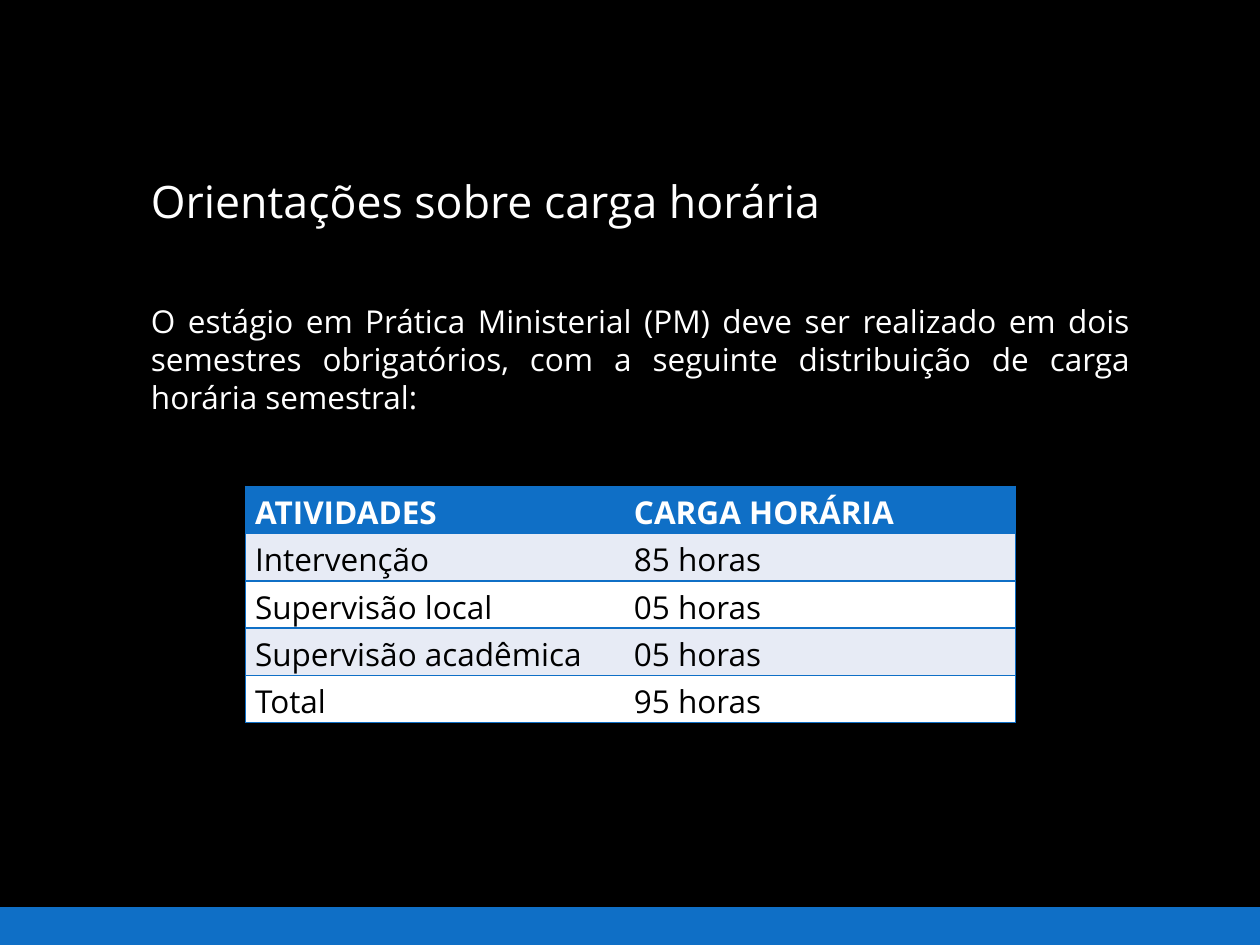
from dataclasses import dataclass

from lxml.etree import SubElement
from pptx import Presentation
from pptx.dml.color import RGBColor
from pptx.enum.shapes import MSO_SHAPE
from pptx.enum.text import MSO_ANCHOR, PP_ALIGN
from pptx.oxml.ns import qn
from pptx.util import Pt

COLORS = {
    "background": "000000",
    "accent": "0F6FC6",
    "light": "FFFFFF",
    "dark": "000000",
    "band": "E7EBF5",
}
FONT = "Open Sans"
COLUMN_WIDTHS = (216.5, 223.5)
ROW_HEIGHT = 27


@dataclass
class Activity:
    name: str
    hours: str


HEADER = Activity("ATIVIDADES", "CARGA HORÁRIA")
ACTIVITIES = [
    Activity("Intervenção", "85 horas"),
    Activity("Supervisão local", "05 horas"),
    Activity("Supervisão acadêmica", "05 horas"),
    Activity("Total", "95 horas"),
]


def rgb(name: str) -> RGBColor:
    return RGBColor.from_string(COLORS[name])


def write(frame, text: str, *, size: float = 18, color: str = "light",
          bold: bool = False, align=PP_ALIGN.LEFT, line_spacing: float = 1.0) -> None:
    paragraph = frame.paragraphs[0]
    paragraph.alignment = align
    paragraph.line_spacing = line_spacing
    run = paragraph.add_run()
    run.text = text
    run.font.name = FONT
    run.font.size = Pt(size)
    run.font.bold = bold
    run.font.color.rgb = rgb(color)


def add_text(slide, left: float, top: float, width: float, height: float,
             text: str, *, anchor=MSO_ANCHOR.TOP, **text_format) -> None:
    frame = slide.shapes.add_textbox(Pt(left), Pt(top), Pt(width), Pt(height)).text_frame
    frame.word_wrap = True
    frame.vertical_anchor = anchor
    write(frame, text, **text_format)


def set_borders(cell, sides: str) -> None:
    """Rule the given sides (letters of LRTB) and clear the others."""
    properties = cell._tc.get_or_add_tcPr()
    for side in "LRTB":
        line = SubElement(properties, qn(f"a:ln{side}"), w=str(Pt(1)))
        if side in sides:
            fill = SubElement(line, qn("a:solidFill"))
            SubElement(fill, qn("a:srgbClr"), val=COLORS["accent"])
        else:
            SubElement(line, qn("a:noFill"))


def fill_cell(cell, text: str, *, sides: str, fill: str, color: str, bold: bool) -> None:
    set_borders(cell, sides)
    cell.fill.solid()
    cell.fill.fore_color.rgb = rgb(fill)
    cell.margin_left = cell.margin_right = Pt(5.4)
    cell.margin_top = cell.margin_bottom = Pt(2.7)
    write(cell.text_frame, text, color=color, bold=bold)


def add_hours_table(slide, left: float, top: float) -> None:
    rows = [HEADER, *ACTIVITIES]
    table = slide.shapes.add_table(
        len(rows), len(COLUMN_WIDTHS), Pt(left), Pt(top),
        Pt(sum(COLUMN_WIDTHS)), Pt(ROW_HEIGHT * len(rows)),
    ).table
    for column, width in zip(table.columns, COLUMN_WIDTHS):
        column.width = Pt(width)
    for index, activity in enumerate(rows):
        is_header = index == 0
        table.rows[index].height = Pt(ROW_HEIGHT)
        row_format = {
            "fill": "accent" if is_header else "band" if index % 2 else "light",
            "color": "light" if is_header else "dark",
            "bold": is_header,
        }
        fill_cell(table.cell(index, 0), activity.name, sides="LTB", **row_format)
        fill_cell(table.cell(index, 1), activity.hours, sides="RTB", **row_format)


def add_footer_bar(slide) -> None:
    bar = slide.shapes.add_shape(MSO_SHAPE.RECTANGLE, Pt(0), Pt(518.4), Pt(720), Pt(21.6))
    bar.shadow.inherit = False
    bar.fill.solid()
    bar.fill.fore_color.rgb = rgb("accent")
    bar.line.fill.background()


def main() -> None:
    presentation = Presentation()
    presentation.slide_width = Pt(720)
    presentation.slide_height = Pt(540)
    slide = presentation.slides.add_slide(presentation.slide_layouts[6])
    slide.background.fill.solid()
    slide.background.fill.fore_color.rgb = rgb("background")

    add_footer_bar(slide)
    add_text(slide, 79.2, 36.7, 561.6, 97.2, "Orientações sobre carga horária",
             size=25.5, anchor=MSO_ANCHOR.BOTTOM, line_spacing=0.9)
    add_hours_table(slide, 140.4, 277.9)
    add_text(slide, 79.2, 169.2, 573.8, 72.7,
             "O estágio em Prática Ministerial (PM) deve ser realizado em dois "
             "semestres obrigatórios, com a seguinte distribuição de carga "
             "horária semestral:", align=PP_ALIGN.JUSTIFY)
    presentation.save("out.pptx")


if __name__ == "__main__":
    main()
